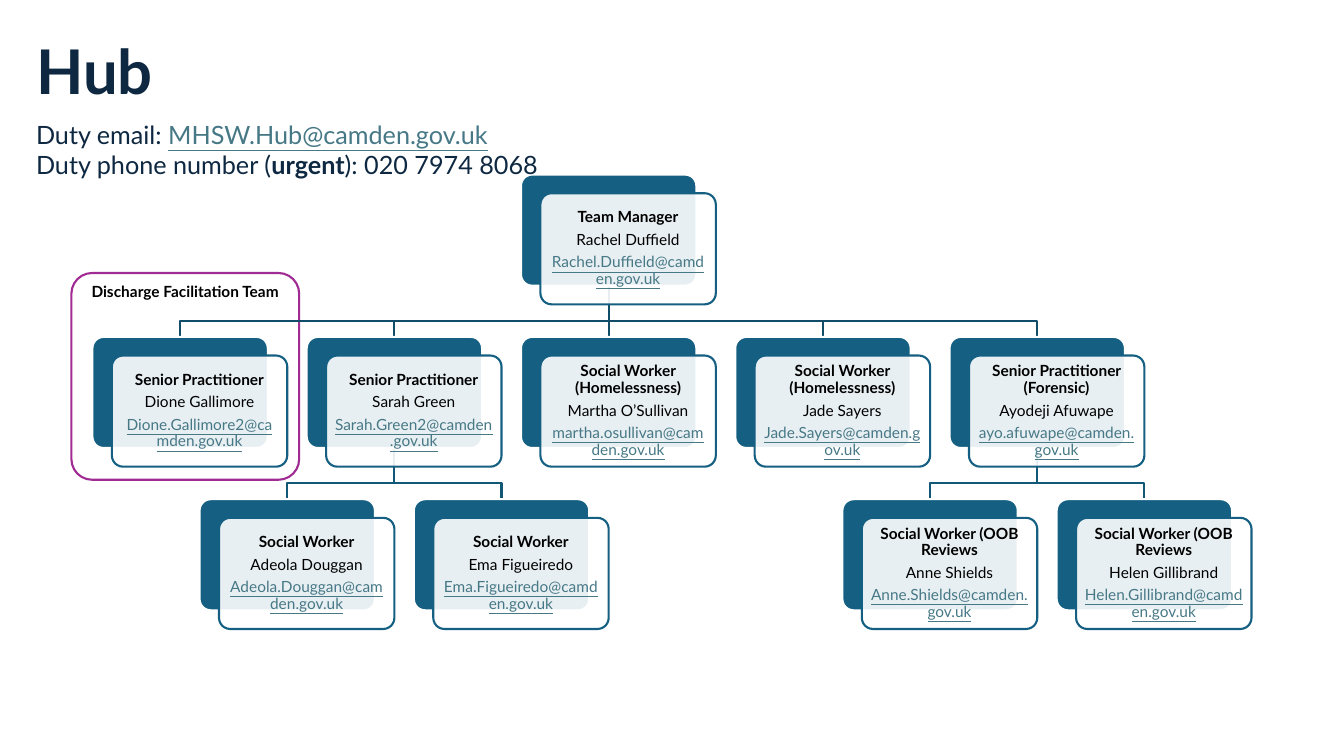
from dataclasses import dataclass

from lxml import etree
from pptx import Presentation
from pptx.dml.color import RGBColor
from pptx.enum.shapes import MSO_CONNECTOR, MSO_SHAPE
from pptx.enum.text import MSO_ANCHOR, MSO_AUTO_SIZE, PP_ALIGN
from pptx.oxml.ns import qn
from pptx.shapes.autoshape import Shape
from pptx.text.text import TextFrame
from pptx.util import Cm, Pt

ROUND = MSO_SHAPE.ROUNDED_RECTANGLE
STRAIGHT = MSO_CONNECTOR.STRAIGHT
TOP, MIDDLE = MSO_ANCHOR.TOP, MSO_ANCHOR.MIDDLE
LEFT, CENTER = PP_ALIGN.LEFT, PP_ALIGN.CENTER
FIXED = MSO_AUTO_SIZE.NONE

WHITE = RGBColor(0xFF, 0xFF, 0xFF)
BLACK = RGBColor(0x00, 0x00, 0x00)
NAVY = RGBColor(0x0E, 0x28, 0x41)
TEAL = RGBColor(0x15, 0x60, 0x82)
UPPER = RGBColor(0x11, 0x4D, 0x68)
LOWER = RGBColor(0x13, 0x57, 0x76)
PURPLE = RGBColor(0xA0, 0x2B, 0x93)
LINK = RGBColor(0x46, 0x78, 0x86)

FONT = "Lato"
EDGE = Pt(1.5)
X0, Y0 = 2.33, 4.4
STEP_X, STEP_Y = 5.4, 4.09
CARD_W, CARD_H = 4.42, 2.8
SHIFT_X, SHIFT_Y = 0.49, 0.47
DROP = 0.89


@dataclass(frozen=True)
class Run:
    text: str
    size: float = 11
    color: RGBColor = BLACK
    bold: bool = False
    line: bool = False


@dataclass(frozen=True)
class Card:
    role: str
    name: str
    mail: str
    col: float
    row: int
    boss: int | None = None

    @property
    def left(self) -> float:
        return X0 + self.col * STEP_X

    @property
    def top(self) -> float:
        return Y0 + self.row * STEP_Y

    @property
    def mid(self) -> float:
        return self.left + CARD_W / 2


CARDS = [
    Card("Team Manager", "Rachel Duffield", "Rachel.Duffield@camden.gov.uk", 2, 0),
    Card("Senior Practitioner", "Dione Gallimore", "Dione.Gallimore2@camden.gov.uk", 0, 1, 0),
    Card("Senior Practitioner", "Sarah Green", "Sarah.Green2@camden.gov.uk", 1, 1, 0),
    Card("Social Worker (Homelessness)", "Martha O’Sullivan", "martha.osullivan@camden.gov.uk", 2, 1, 0),
    Card("Social Worker (Homelessness)", "Jade Sayers", "Jade.Sayers@camden.gov.uk", 3, 1, 0),
    Card("Senior Practitioner (Forensic)", "Ayodeji Afuwape", "ayo.afuwape@camden.gov.uk", 4, 1, 0),
    Card("Social Worker", "Adeola Douggan", "Adeola.Douggan@camden.gov.uk", 0.5, 2, 2),
    Card("Social Worker", "Ema Figueiredo", "Ema.Figueiredo@camden.gov.uk", 1.5, 2, 2),
    Card("Social Worker (OOB Reviews", "Anne Shields", "Anne.Shields@camden.gov.uk", 3.5, 2, 5),
    Card("Social Worker (OOB Reviews", "Helen Gillibrand", "Helen.Gillibrand@camden.gov.uk", 4.5, 2, 5),
]


def write(frame: TextFrame, lines: list[list[Run]], align: PP_ALIGN = LEFT,
          space: float = 1, after: float = 0) -> None:
    frame.word_wrap = True
    frame.auto_size = FIXED
    for i, line in enumerate(lines):
        para = frame.paragraphs[0] if i == 0 else frame.add_paragraph()
        para.alignment = align
        para.line_spacing = space
        para.space_after = Pt(after)
        for item in line:
            run = para.add_run()
            run.text = item.text
            font = run.font
            font.name = FONT
            font.size = Pt(item.size)
            font.bold = item.bold
            font.underline = item.line
            font.color.rgb = item.color


def panel(left: float, top: float, width: float, height: float,
          fill: RGBColor, edge: RGBColor, sheer: bool = False) -> Shape:
    shape = slide.shapes.add_shape(ROUND, Cm(left), Cm(top), Cm(width), Cm(height))
    shape.adjustments[0] = 0.1
    shape.shadow.inherit = False
    shape.fill.solid()
    shape.fill.fore_color.rgb = fill
    shape.line.color.rgb = edge
    shape.line.width = EDGE
    if sheer:
        tint = shape.element.spPr.find(qn("a:solidFill")).find(qn("a:srgbClr"))
        etree.SubElement(tint, qn("a:alpha")).set("val", "90000")
    return shape


def label(shape: Shape, lines: list[list[Run]], anchor: MSO_ANCHOR) -> None:
    frame = shape.text_frame
    frame.margin_left = frame.margin_right = Cm(0.13)
    frame.margin_top = frame.margin_bottom = Cm(0.13)
    frame.vertical_anchor = anchor
    write(frame, lines, CENTER, 0.9, 4.2)


def draw(card: Card) -> Shape:
    back = panel(card.left, card.top, CARD_W, CARD_H, TEAL, WHITE)
    front = panel(card.left + SHIFT_X, card.top + SHIFT_Y, CARD_W, CARD_H, WHITE, TEAL, True)
    label(front, [[Run(card.role, bold=True)], [Run(card.name)],
                  [Run(card.mail, color=LINK, line=True)]], MIDDLE)
    return back


def join(card: Card, boss: Card, child: Shape, head: Shape, base: Shape) -> None:
    start = boss.top + CARD_H
    if card.col == boss.col:
        link = slide.shapes.add_connector(STRAIGHT, Cm(boss.mid), Cm(start), Cm(card.mid), Cm(card.top))
        link.begin_connect(head, 2)
        link.end_connect(child, 0)
        etree.SubElement(link.element.spPr, qn("a:effectLst"))
    else:
        turn = start + DROP
        path = slide.shapes.build_freeform(Cm(boss.mid), Cm(start))
        path.add_line_segments([(Cm(boss.mid), Cm(turn)), (Cm(card.mid), Cm(turn)),
                                (Cm(card.mid), Cm(card.top))], close=False)
        link = path.convert_to_shape()
        link.shadow.inherit = False
        link.fill.background()
    link.line.color.rgb = UPPER if boss.row == 0 else LOWER
    link.line.width = EDGE
    base.element.addprevious(link.element)


deck = Presentation()
deck.slide_width, deck.slide_height = Cm(33.87), Cm(19.05)
slide = deck.slides.add_slide(deck.slide_layouts[5])

title = slide.shapes.title
title.left, title.top, title.width, title.height = Cm(0.66), Cm(0.91), Cm(29.2), Cm(1.96)
title.text_frame.vertical_anchor = MIDDLE
write(title.text_frame, [[Run("Hub", 44, NAVY, True)]], space=0.9)

team = panel(1.8, 6.88, 5.74, 5.21, WHITE, PURPLE, True)
label(team, [[Run("Discharge Facilitation Team", bold=True)]], TOP)

backs = [draw(card) for card in CARDS]
for card, back in zip(CARDS, backs):
    if card.boss is not None:
        join(card, CARDS[card.boss], back, backs[card.boss], backs[0])

duty = slide.shapes.add_textbox(Cm(0.66), Cm(2.87), Cm(13.23), Cm(1.8))
write(duty.text_frame, [
    [Run("Duty email: ", 18, NAVY), Run("MHSW.Hub@camden.gov.uk", 18, LINK, line=True)],
    [Run("Duty phone number (", 18, NAVY), Run("urgent", 18, NAVY, True),
     Run("): 020 7974 8068", 18, NAVY)],
])

deck.save("out.pptx")
